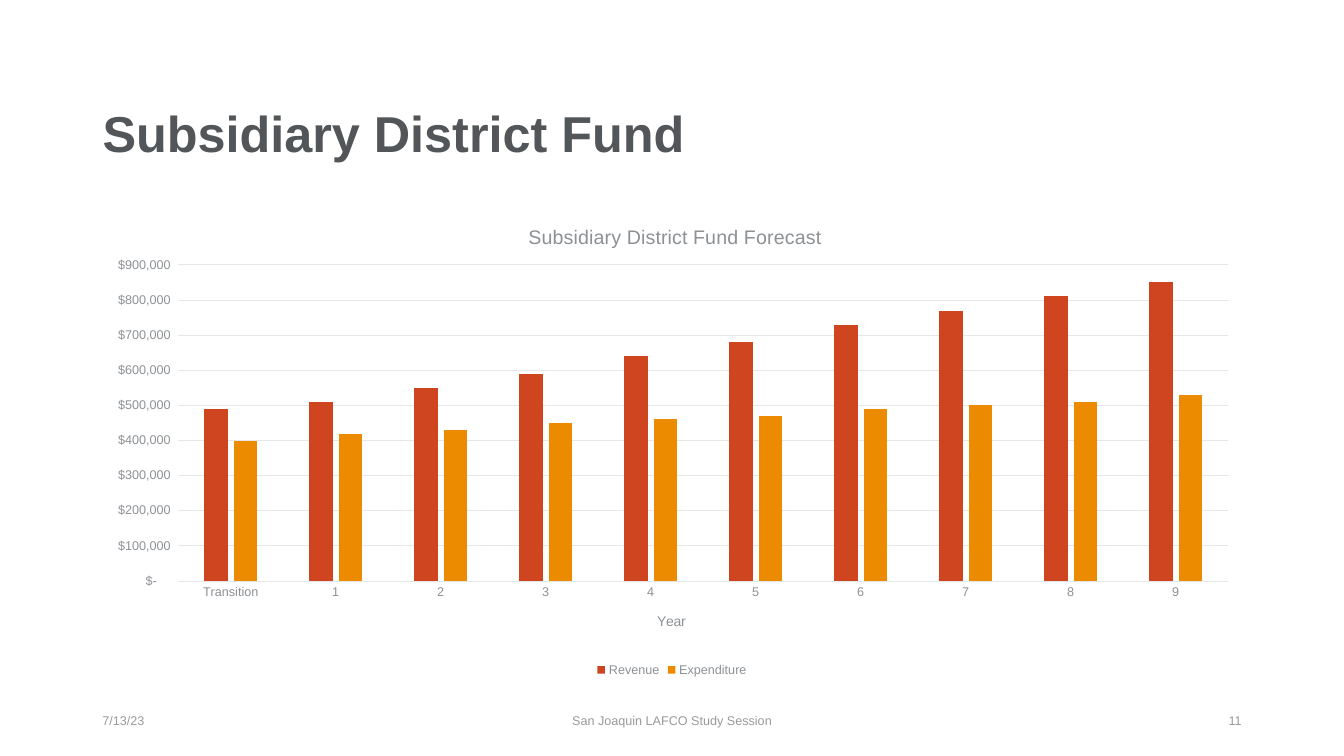
from dataclasses import dataclass

from lxml import etree
from pptx import Presentation
from pptx.chart.data import CategoryChartData
from pptx.dml.color import RGBColor
from pptx.enum.chart import XL_CHART_TYPE, XL_LEGEND_POSITION, XL_TICK_MARK
from pptx.enum.text import MSO_ANCHOR, MSO_AUTO_SIZE, PP_ALIGN
from pptx.oxml.ns import qn
from pptx.util import Cm, Pt

CLUSTERED = XL_CHART_TYPE.COLUMN_CLUSTERED
BOTTOM = XL_LEGEND_POSITION.BOTTOM
NO_TICK = XL_TICK_MARK.NONE
MIDDLE = MSO_ANCHOR.MIDDLE
NO_AUTOFIT = MSO_AUTO_SIZE.NONE
LEFT, CENTER, RIGHT = PP_ALIGN.LEFT, PP_ALIGN.CENTER, PP_ALIGN.RIGHT


@dataclass(frozen=True)
class Theme:
    font: str = "Arial"
    heading: str = "535659"
    label: str = "8D9195"
    footer: str = "999A9B"
    grid: str = "E5E6E7"
    revenue: str = "CF4520"
    expenditure: str = "ED8B00"
    heading_size: int = 36
    chart_title_size: int = 14
    axis_title_size: int = 10
    small_size: int = 9


THEME = Theme()
DOLLARS = r'_("$"* #,##0_);_("$"* \(#,##0\);_("$"* "-"??_);_(@_)'
YEARS = ["Transition"] + [str(year) for year in range(1, 10)]
FUND = [
    ("Revenue", THEME.revenue, [490000, 510000, 550000, 590000, 640000,
                                680000, 730000, 770000, 810000, 850000]),
    ("Expenditure", THEME.expenditure, [400000, 420000, 430000, 450000, 460000,
                                        470000, 490000, 500000, 510000, 530000]),
]


def style_font(font, size, color, bold=False):
    font.name = THEME.font
    font.size = Pt(size)
    font.bold = bold
    font.color.rgb = RGBColor.from_string(color)


def add_run(paragraph, text, size, color, bold=False):
    run = paragraph.add_run()
    run.text = text
    style_font(run.font, size, color, bold)


def style_grid_line(line):
    line.color.rgb = RGBColor.from_string(THEME.grid)
    line.width = Pt(0.75)


def set_layout(parent, index, **settings):
    for existing in parent.findall(qn("c:layout")):
        parent.remove(existing)
    layout = etree.Element(qn("c:layout"))
    manual = etree.SubElement(layout, qn("c:manualLayout"))
    for name, value in settings.items():
        etree.SubElement(manual, qn(f"c:{name}")).set("val", str(value))
    parent.insert(index, layout)


def place_title(slide, left, top, width, height):
    title = slide.shapes.title
    title.left, title.top, title.width, title.height = left, top, width, height
    frame = title.text_frame
    frame.auto_size = NO_AUTOFIT
    frame.vertical_anchor = MIDDLE
    paragraph = frame.paragraphs[0]
    paragraph.alignment = LEFT
    paragraph.line_spacing = 0.9
    add_run(paragraph, "Subsidiary District Fund", THEME.heading_size, THEME.heading, True)


def add_fund_chart(slide, left, top, width, height):
    data = CategoryChartData(number_format=DOLLARS)
    data.categories = YEARS
    for name, _, values in FUND:
        data.add_series(name, values)
    chart = slide.shapes.add_chart(CLUSTERED, left, top, width, height, data).chart
    style_font(chart.font, THEME.small_size, THEME.label)

    chart.has_title = True
    add_run(chart.chart_title.text_frame.paragraphs[0], "Subsidiary District Fund Forecast",
            THEME.chart_title_size, THEME.label)
    chart.has_legend = True
    chart.legend.position = BOTTOM
    chart.legend.include_in_layout = False
    style_font(chart.legend.font, THEME.small_size, THEME.label)

    plot = chart.plots[0]
    plot.vary_by_categories = False
    plot.gap_width = 219
    plot.overlap = -27
    for series, (_, color, _) in zip(plot.series, FUND):
        series.format.fill.solid()
        series.format.fill.fore_color.rgb = RGBColor.from_string(color)

    years, amounts = chart.category_axis, chart.value_axis
    for axis in (years, amounts):
        axis.major_tick_mark = NO_TICK
        axis.minor_tick_mark = NO_TICK
        style_font(axis.tick_labels.font, THEME.small_size, THEME.label)
    style_grid_line(years.format.line)
    add_run(years.axis_title.text_frame.paragraphs[0], "Year",
            THEME.axis_title_size, THEME.label)

    amounts.minimum_scale, amounts.maximum_scale = 0, 900000
    amounts.major_unit = 100000
    amounts.tick_labels.number_format = DOLLARS
    amounts.tick_labels.number_format_is_linked = False
    amounts.format.line.fill.background()
    style_grid_line(amounts.major_gridlines.format.line)

    set_layout(chart.element.find(".//" + qn("c:plotArea")), 0, layoutTarget="inner",
               xMode="edge", yMode="edge", x=0.074, y=0.132, w=0.906, h=0.659)
    set_layout(chart.element.find(qn("c:chart")).find(qn("c:title")), 1,
               xMode="edge", yMode="edge", x=0.373, y=0.04)


def add_footer(slide, left, top, width, height):
    side, middle = Cm(7.62), Cm(11.43)
    parts = [
        ("7/13/23", LEFT, left, side),
        ("San Joaquin LAFCO Study Session", CENTER, left + (width - middle) // 2, middle),
        ("11", RIGHT, left + width - side, side),
    ]
    for text, alignment, part_left, part_width in parts:
        frame = slide.shapes.add_textbox(part_left, top, part_width, height).text_frame
        frame.word_wrap = True
        frame.vertical_anchor = MIDDLE
        paragraph = frame.paragraphs[0]
        paragraph.alignment = alignment
        add_run(paragraph, text, THEME.small_size, THEME.footer)


def main():
    presentation = Presentation()
    presentation.slide_width, presentation.slide_height = Cm(33.87), Cm(19.05)
    slide = presentation.slides.add_slide(presentation.slide_layouts[5])
    left, width = Cm(2.33), Cm(29.21)
    place_title(slide, left, Cm(2.18), width, Cm(2.51))
    add_fund_chart(slide, left, Cm(5.08), width, Cm(12.09))
    add_footer(slide, left, Cm(17.65), width, Cm(1.02))
    presentation.save("out.pptx")


if __name__ == "__main__":
    main()
